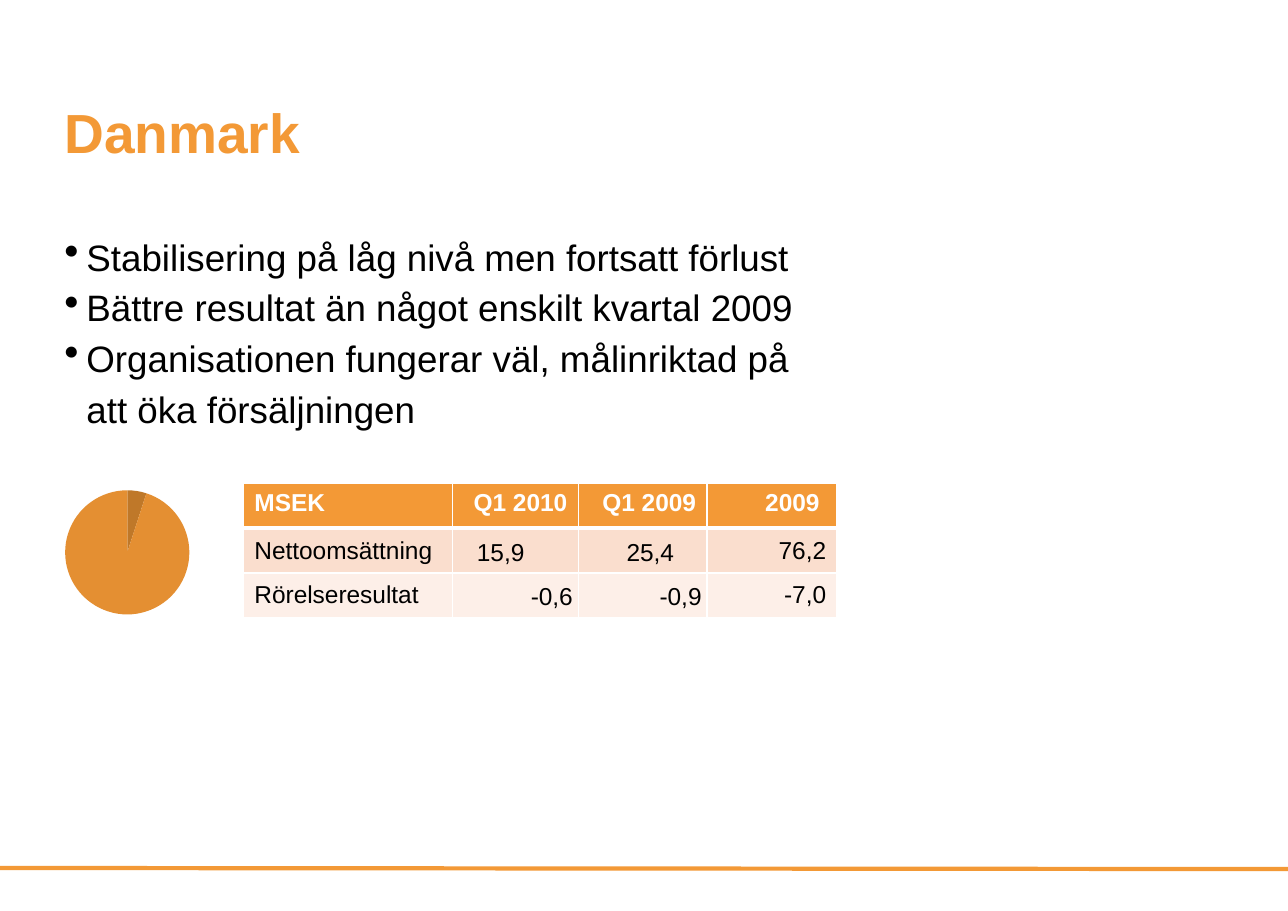
import pptx
import pptx.chart.data
import pptx.dml.color
import pptx.enum.chart
import pptx.enum.shapes
import pptx.enum.text
import pptx.oxml
import pptx.oxml.ns
import pptx.util
from dataclasses import dataclass

ALIGN = pptx.enum.text.PP_ALIGN
ANCHOR = pptx.enum.text.MSO_ANCHOR


@dataclass(frozen=True)
class Theme:
    font: str = "Arial"
    accent: str = "F39936"
    ink: str = "000000"
    paper: str = "FFFFFF"
    bands: tuple = ("FADECE", "FDEFE8")
    slices: tuple = ("BF7829", "E48F32")
    title_size: int = 36
    body_size: int = 24
    table_size: int = 16
    rule_width: float = 2.75


def color(value):
    return pptx.dml.color.RGBColor.from_string(value)


def apply(target, values):
    for name, value in values.items():
        setattr(target, name, value)


def add_xml(parent, tag, **attributes):
    child = pptx.oxml.parse_xml(f"<a:{tag} {pptx.oxml.ns.nsdecls('a')}/>")
    for name, value in attributes.items():
        child.set(name, str(value))
    parent.append(child)
    return child


class Page:
    """Draws on one slide; lengths are hundredths of its width and height."""

    def __init__(self, deck, theme):
        self.theme = theme
        self.column = deck.slide_width / 100
        self.row = deck.slide_height / 100
        self.shapes = deck.slides.add_slide(deck.slide_layouts[6]).shapes

    def place(self, left, top, width, height):
        return (round(left * self.column), round(top * self.row),
                round(width * self.column), round(height * self.row))

    def style(self, font, size, ink, bold=False):
        apply(font, {"name": self.theme.font, "size": pptx.util.Pt(size), "bold": bold})
        font.color.rgb = color(ink)

    def rule(self, top, end_top):
        left, start, right, end = self.place(0, top, 100, end_top)
        line = self.shapes.add_connector(
            pptx.enum.shapes.MSO_CONNECTOR.STRAIGHT, left, start, right, end)
        line.line.color.rgb = color(self.theme.accent)
        line.line.width = pptx.util.Pt(self.theme.rule_width)
        add_xml(line._element.spPr, "effectLst")

    def text(self, area, lines, size, ink, bold=False, bullet=None, spacing=1.0):
        frame = self.shapes.add_textbox(*self.place(*area)).text_frame
        apply(frame, {"word_wrap": True, "margin_left": 0, "margin_right": 0,
                      "margin_top": 0, "margin_bottom": 0, "vertical_anchor": ANCHOR.TOP})
        for index, line in enumerate(lines):
            para = frame.paragraphs[0] if index == 0 else frame.add_paragraph()
            para.line_spacing = spacing
            if bullet:
                self.bullet(para, bullet)
            for part_index, part in enumerate(line.split("\n")):
                if part_index:
                    para.add_line_break()
                span = para.add_run()
                span.text = part
                self.style(span.font, size, ink, bold)

    def bullet(self, para, mark):
        properties = para._p.get_or_add_pPr()
        indent = pptx.util.Inches(0.2)
        properties.set("marL", str(indent))
        properties.set("indent", str(-indent))
        add_xml(properties, "buSzPct", val=115000)
        add_xml(properties, "buChar", char=mark)

    def borders(self, cell, header_below, header):
        """Rule every side, thicker where the header meets the body."""
        widths = {"lnL": 1, "lnR": 1, "lnT": 3 if header_below else 1, "lnB": 3 if header else 1}
        for side, width in widths.items():
            line = add_xml(cell._tc.get_or_add_tcPr(), side, w=pptx.util.Pt(width))
            add_xml(add_xml(line, "solidFill"), "srgbClr", val=self.theme.paper)

    def table(self, area, widths, rows, insets, narrow):
        """Insets give the right margin of chosen cells; narrow lists the tight, spaced ones."""
        theme = self.theme
        grid = self.shapes.add_table(len(rows), len(widths), *self.place(*area)).table
        for column, width in zip(grid.columns, widths):
            column.width = round(width * self.column)
        for r, row in enumerate(rows):
            header = r == 0
            for c, value in enumerate(row):
                cell = grid.cell(r, c)
                self.borders(cell, r == 1, header)
                cell.fill.solid()
                cell.fill.fore_color.rgb = color(theme.accent if header else theme.bands[r - 1])
                cell.vertical_anchor = ANCHOR.TOP if header else ANCHOR.MIDDLE
                para = cell.text_frame.paragraphs[0]
                para.alignment = ALIGN.RIGHT if c else ALIGN.LEFT
                if (r, c) in narrow:
                    para.line_spacing = 1.15
                    apply(cell, {"margin_left": pptx.util.Inches(0.05), "margin_top": 0,
                                 "margin_right": pptx.util.Inches(0.05), "margin_bottom": 0})
                if (r, c) in insets:
                    cell.margin_right = pptx.util.Inches(insets[r, c])
                span = para.add_run()
                span.text = value
                self.style(span.font, theme.table_size, theme.paper if header else theme.ink, header)

    def pie(self, area, values, plot):
        data = pptx.chart.data.CategoryChartData()
        data.categories = [str(number + 1) for number in range(len(values))]
        data.add_series("Series 1", values)
        chart = self.shapes.add_chart(
            pptx.enum.chart.XL_CHART_TYPE.PIE, *self.place(*area), data).chart
        apply(chart, {"has_legend": False, "has_title": False})
        self.style(chart.font, 18, self.theme.ink)
        chart.plots[0].vary_by_categories = False
        for index, shade in enumerate(self.theme.slices):
            point = chart.plots[0].series[0].points[index].format
            point.fill.solid()
            point.fill.fore_color.rgb = color(shade)
            point.line.fill.background()
        area_xml = chart._chartSpace.chart.plotArea
        for old in area_xml.findall(pptx.oxml.ns.qn("c:layout")):
            area_xml.remove(old)
        settings = {"layoutTarget": "inner", "xMode": "edge", "yMode": "edge", **plot}
        parts = "".join(f'<c:{name} val="{value}"/>' for name, value in settings.items())
        area_xml.insert(0, pptx.oxml.parse_xml(
            f"<c:layout {pptx.oxml.ns.nsdecls('c')}><c:manualLayout>{parts}"
            "</c:manualLayout></c:layout>"))


def main():
    theme = Theme()
    deck = pptx.Presentation()
    deck.slide_width = pptx.util.Inches(11.69)
    deck.slide_height = pptx.util.Inches(8.27)
    page = Page(deck, theme)

    page.rule(95.28, 95.4)
    page.text((5, 10.76, 50.1, 13.5), ["Danmark"], theme.title_size, theme.accent, bold=True)
    page.text((5, 25.03, 92.7, 23.9), [
        "Stabilisering på låg nivå men fortsatt förlust",
        "Bättre resultat än något enskilt kvartal 2009",
        "Organisationen fungerar väl, målinriktad på\natt öka försäljningen",
    ], theme.body_size, theme.ink, bullet="•", spacing=1.15)
    page.table(
        (18.9, 53.08, 46.1, 14.75), (16.25, 9.75, 10, 10.1),
        [("MSEK", "Q1 2010", "Q1 2009", "2009"),
         ("Nettoomsättning", "15,9", "25,4", "76,2"),
         ("Rörelseresultat", "-0,6", "-0,9", "-7,0")],
        insets={(0, 3): 0.16, (1, 1): 0.49, (1, 2): 0.3},
        narrow={(1, 1), (1, 2), (2, 1), (2, 2)})
    page.pie((0.86, 52.12, 18.05, 17.05), (5, 95),
             {"x": 0.23, "y": 0.1, "w": 0.54, "h": 0.8})
    deck.save("out.pptx")


if __name__ == "__main__":
    main()
